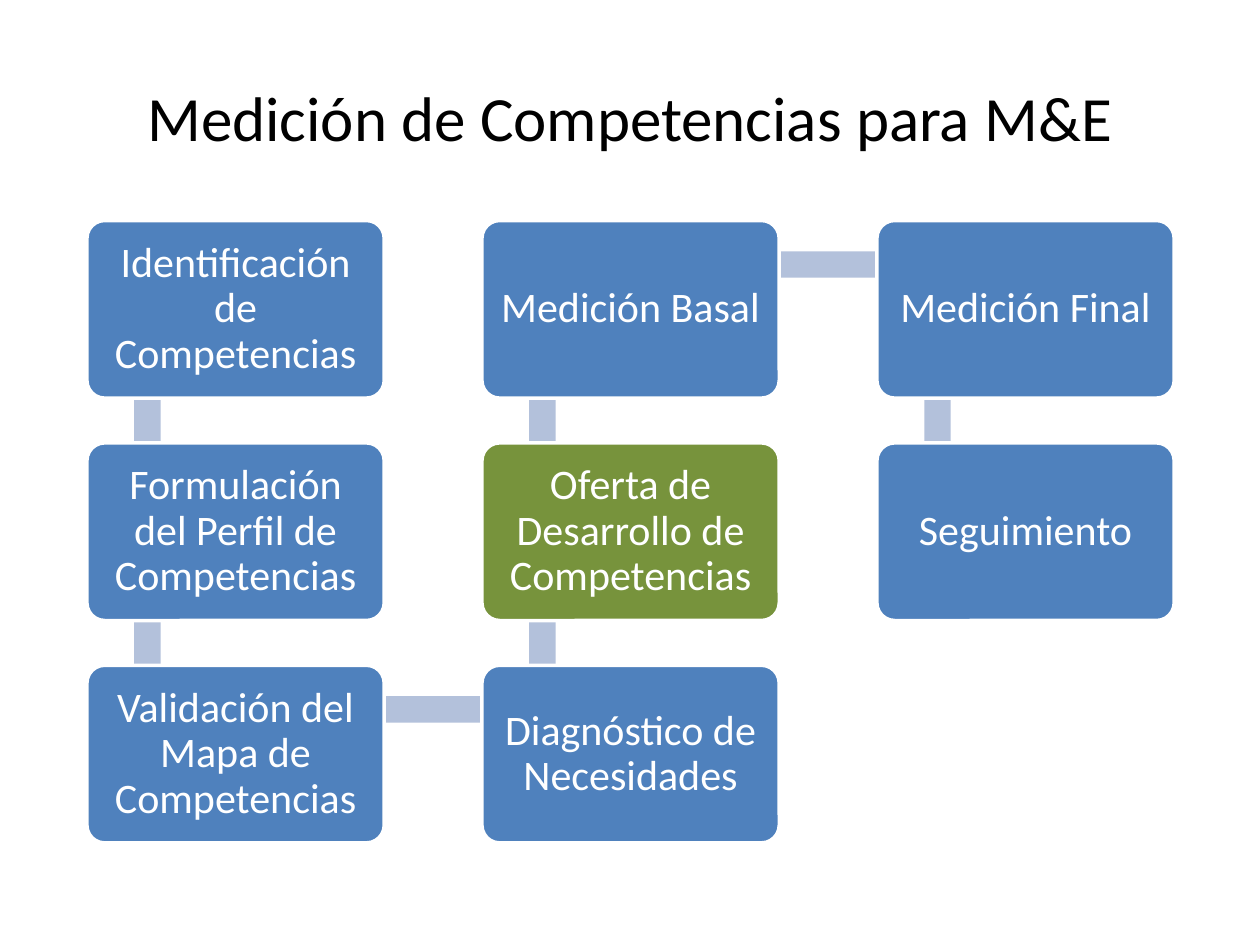
import dataclasses
import itertools

import pptx
import pptx.dml.color
import pptx.enum.shapes
import pptx.enum.text
import pptx.util

Inches = pptx.util.Inches
Shape = pptx.enum.shapes.MSO_SHAPE


@dataclasses.dataclass(frozen=True)
class Theme:
    font: str = "Calibri"
    title: int = 36
    body: int = 24
    ink: str = "000000"
    white: str = "FFFFFF"
    blue: str = "4F81BD"
    green: str = "77933C"
    pale: str = "B3C1DB"


THEME = Theme()

# Steps in order: column, row, text, fill
STEPS = [
    (0, 0, "Identificación de Competencias", THEME.blue),
    (0, 1, "Formulación del Perfil de Competencias", THEME.blue),
    (0, 2, "Validación del Mapa de Competencias", THEME.blue),
    (1, 2, "Diagnóstico de Necesidades", THEME.blue),
    (1, 1, "Oferta de Desarrollo de Competencias", THEME.green),
    (1, 0, "Medición Basal", THEME.blue),
    (2, 0, "Medición Final", THEME.blue),
    (2, 1, "Seguimiento", THEME.blue),
]


def paint(code):
    return pptx.dml.color.RGBColor.from_string(code)


def write(shape, text, *, size, color, space=1.0, inset=0.1):
    """Fill a shape with centred text."""
    frame = shape.text_frame
    frame.word_wrap = True
    frame.vertical_anchor = pptx.enum.text.MSO_ANCHOR.MIDDLE
    frame.margin_left = frame.margin_right = Inches(inset)
    frame.margin_top = frame.margin_bottom = Inches(inset)
    para = frame.paragraphs[0]
    para.alignment = pptx.enum.text.PP_ALIGN.CENTER
    para.line_spacing = space
    run = para.add_run()
    run.text = text
    run.font.name = THEME.font
    run.font.size = pptx.util.Pt(size)
    run.font.color.rgb = paint(color)


def block(slide, kind, box, fill):
    """Add a filled shape without shadow or line."""
    shape = slide.shapes.add_shape(kind, *map(Inches, box))
    shape.shadow.inherit = False
    shape.fill.solid()
    shape.fill.fore_color.rgb = paint(fill)
    shape.line.fill.background()
    return shape


def head(slide, box):
    title = slide.shapes.title
    title.left, title.top, title.width, title.height = map(Inches, box)
    write(title, "Medición de Competencias para M&E",
          size=THEME.title, color=THEME.ink)


def bar(slide, start, end, thick=0.21):
    """Join two points with a bar, turned to follow the flow."""
    (x1, y1), (x2, y2) = start, end
    span = abs(x2 - x1) + abs(y2 - y1)
    left = (x1 + x2 - span) / 2
    top = (y1 + y2 - thick) / 2
    shape = block(slide, Shape.RECTANGLE, (left, top, span, thick), THEME.pale)
    if y1 != y2:
        shape.rotation = 90 if y2 > y1 else 270


def card(slide, box, text, fill):
    shape = block(slide, Shape.ROUNDED_RECTANGLE, box, fill)
    shape.adjustments[0] = 0.1
    shape.line.color.rgb = paint(THEME.white)
    shape.line.width = pptx.util.Pt(2)
    write(shape, text, size=THEME.body, color=THEME.white, space=0.9)


def flow(slide, box, wide=2.36, high=1.41):
    """Lay the steps on a three by three grid that winds up and down."""
    left, top, width, height = box
    dx, dy = (width - wide) / 2, (height - high) / 2
    spots = [(left + col * dx, top + row * dy) for col, row, _, _ in STEPS]

    # Bars run between the same inner point of each card
    joints = [(x + 0.48, y + 0.35) for x, y in spots]
    for start, end in itertools.pairwise(joints):
        bar(slide, start, end)

    # Cards cover the ends of the bars
    for (x, y), (_, _, text, fill) in zip(spots, STEPS):
        card(slide, (x, y, wide, high), text, fill)


def main():
    deck = pptx.Presentation()
    deck.slide_width, deck.slide_height = Inches(10), Inches(7.5)
    slide = deck.slides.add_slide(deck.slide_layouts[5])
    head(slide, (0.5, 0.3, 9, 1.25))
    flow(slide, (0.69, 1.75, 8.63, 4.94))
    deck.save("out.pptx")


if __name__ == "__main__":
    main()
